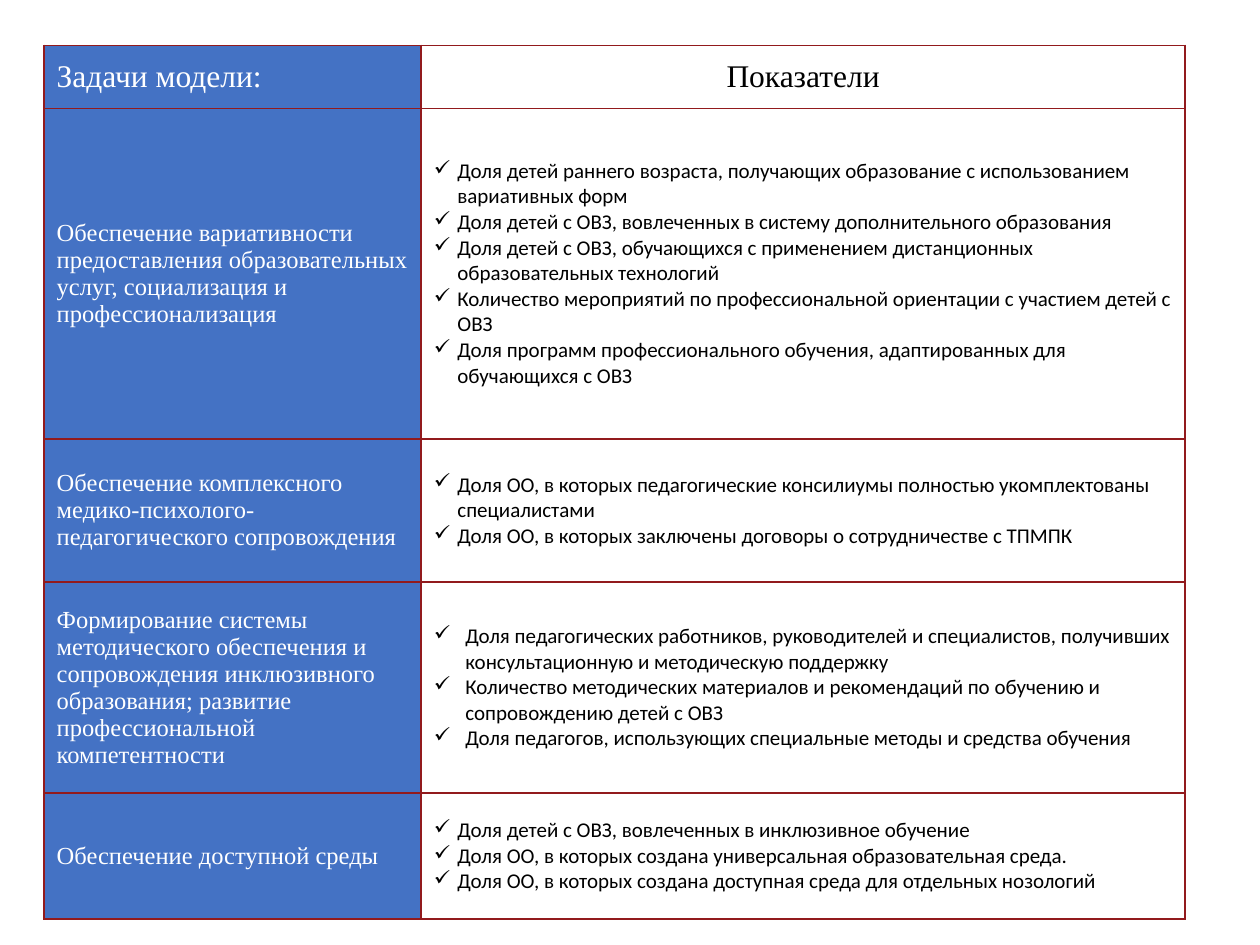
from lxml import etree
from pptx import Presentation
from pptx.dml.color import RGBColor
from pptx.enum.text import MSO_ANCHOR, PP_ALIGN
from pptx.oxml.ns import qn
from pptx.util import Pt

MIDDLE = MSO_ANCHOR.MIDDLE
LEFT, CENTER = PP_ALIGN.LEFT, PP_ALIGN.CENTER
COLORS = {"blue": "4472C4", "white": "FFFFFF", "black": "000000", "border": "921A1D"}
SERIF, SANS = "Times New Roman", "Calibri"


def fill_cell(cell, lines, fill, color, size, font=SERIF, align=LEFT, indent=0):
    """Write paragraphs into a cell; an indent turns them into a check list."""
    cell.fill.solid()
    cell.fill.fore_color.rgb = RGBColor.from_string(COLORS[fill])
    cell.vertical_anchor = MIDDLE
    tf = cell.text_frame
    for i, line in enumerate(lines):
        p = tf.add_paragraph() if i else tf.paragraphs[0]
        p.alignment = align
        r = p.add_run()
        r.text = line
        r.font.name, r.font.size = font, Pt(size)
        r.font.color.rgb = RGBColor.from_string(COLORS[color])
        if indent:
            pPr = p._p.get_or_add_pPr()
            pPr.set("marL", str(Pt(indent)))
            pPr.set("indent", str(-Pt(indent)))
            etree.SubElement(pPr, qn("a:buChar"), char="✓")


def add_borders(cell, color, width):
    tcPr = cell._tc.get_or_add_tcPr()
    for i, side in enumerate(("lnL", "lnR", "lnT", "lnB")):
        ln = etree.Element(qn("a:" + side), w=str(Pt(width)))
        solid = etree.SubElement(ln, qn("a:solidFill"))
        etree.SubElement(solid, qn("a:srgbClr"), val=COLORS[color])
        tcPr.insert(i, ln)


# Content: task paragraphs, indicators, list indent
ROWS = [
    (["Обеспечение вариативности предоставления образовательных услуг, "
      "социализация и профессионализация"],
     ["Доля детей раннего возраста, получающих образование с использованием вариативных форм",
      "Доля детей с ОВЗ, вовлеченных в систему дополнительного образования",
      "Доля детей с ОВЗ, обучающихся с применением дистанционных образовательных технологий",
      "Количество мероприятий по профессиональной ориентации с участием детей с ОВЗ",
      "Доля программ профессионального обучения, адаптированных для обучающихся с ОВЗ"], 13.5),
    (["Обеспечение комплексного медико-психолого-педагогического сопровождения"],
     ["Доля ОО, в которых педагогические консилиумы полностью укомплектованы специалистами",
      "Доля ОО, в которых заключены договоры о сотрудничестве с ТПМПК"], 13.5),
    (["Формирование системы методического обеспечения и сопровождения "
      "инклюзивного образования; развитие",
      "профессиональной компетентности"],
     ["Доля педагогических работников, руководителей и специалистов, получивших "
      "консультационную и методическую поддержку",
      "Количество методических материалов и рекомендаций по обучению и сопровождению детей с ОВЗ",
      "Доля педагогов, использующих специальные методы и средства обучения"], 18),
    (["Обеспечение доступной среды"],
     ["Доля детей с ОВЗ, вовлеченных в инклюзивное обучение",
      "Доля ОО, в которых создана универсальная образовательная среда.",
      "Доля ОО, в которых создана доступная среда для отдельных нозологий"], 13.5),
]
COL_WIDTHS = [215.5, 436.5]
ROW_HEIGHTS = [36, 188.75, 82, 120.5, 72]

# Slide
prs = Presentation()
prs.slide_width, prs.slide_height = Pt(720), Pt(540)
s = prs.slides.add_slide(prs.slide_layouts[6])

# Table grid
table = s.shapes.add_table(len(ROW_HEIGHTS), len(COL_WIDTHS), Pt(25.2), Pt(26),
                           Pt(sum(COL_WIDTHS)), Pt(sum(ROW_HEIGHTS))).table
for col, width in zip(table.columns, COL_WIDTHS):
    col.width = Pt(width)
for row, height in zip(table.rows, ROW_HEIGHTS):
    row.height = Pt(height)

# Header row
fill_cell(table.cell(0, 0), ["Задачи модели:"], "blue", "white", 18)
fill_cell(table.cell(0, 1), ["Показатели"], "white", "black", 18, align=CENTER)

# Tasks and their indicators
for i, (task, indicators, indent) in enumerate(ROWS, start=1):
    fill_cell(table.cell(i, 0), task, "blue", "white", 14)
    fill_cell(table.cell(i, 1), indicators, "white", "black", 12, font=SANS, indent=indent)

# Borders
for cell in table.iter_cells():
    add_borders(cell, "border", 1)

prs.save("out.pptx")
